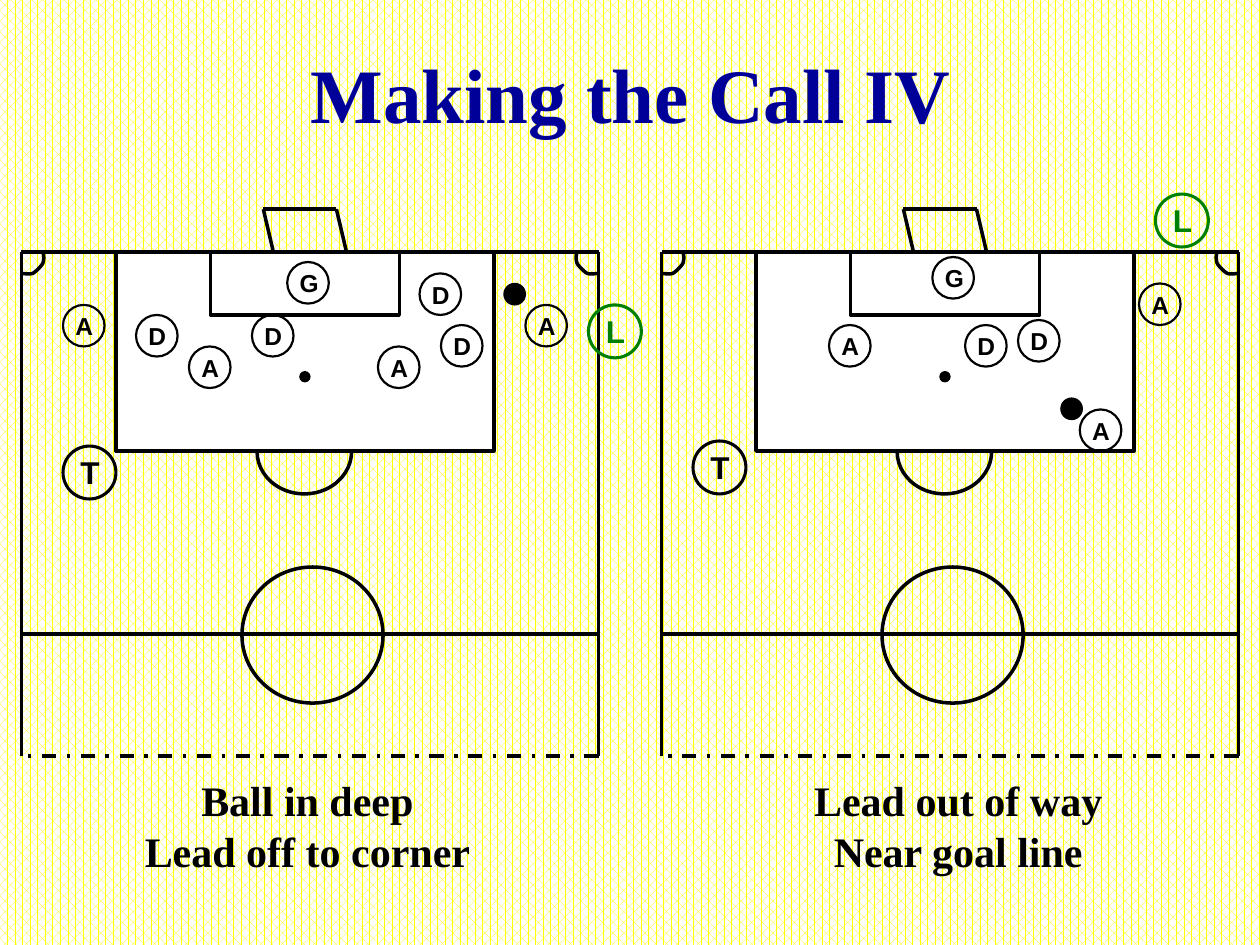
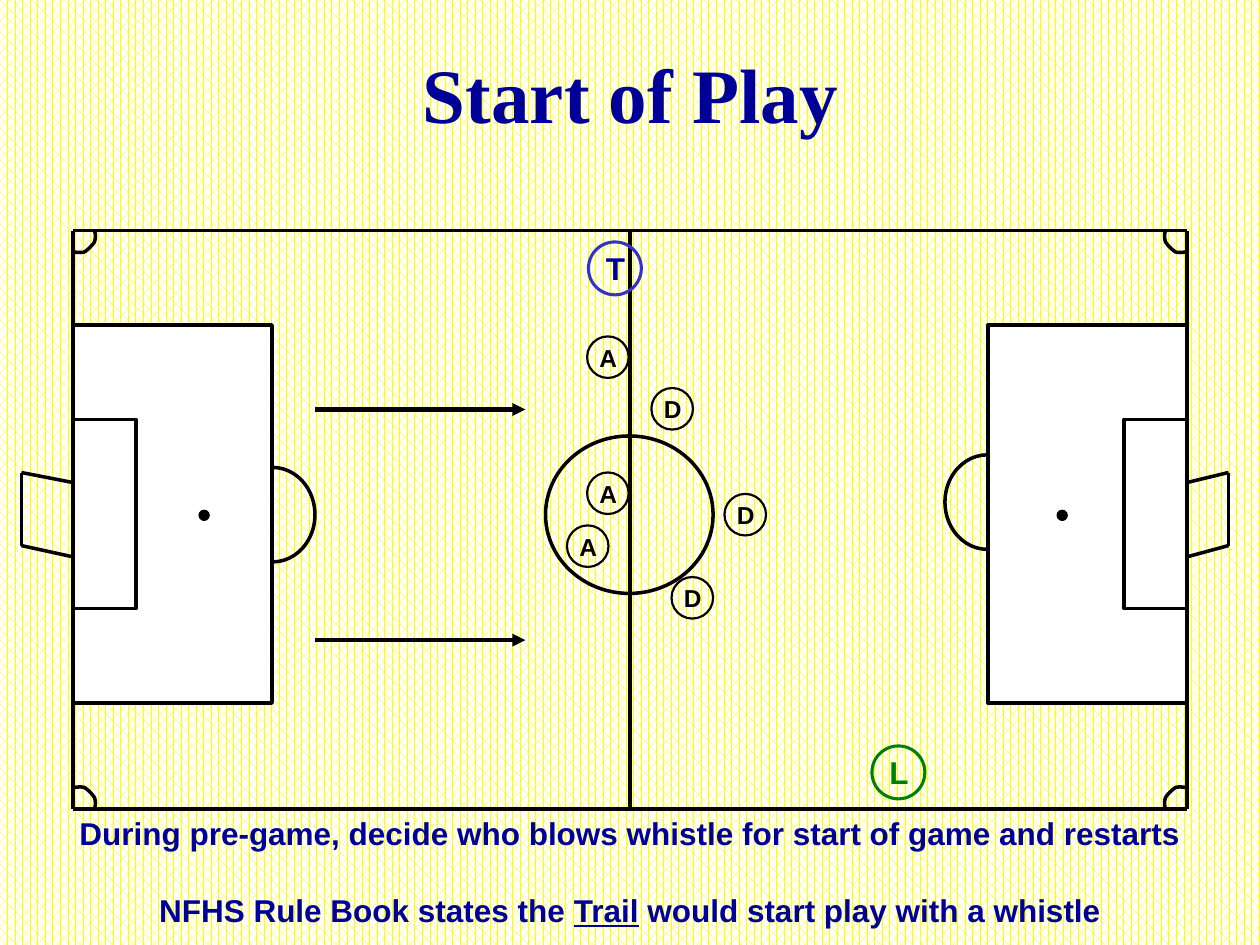
from dataclasses import dataclass
from typing import Any

from lxml import etree
from pptx import Presentation
from pptx.dml.color import RGBColor
from pptx.enum import dml, shapes as kinds, text as layout
from pptx.oxml.ns import qn
from pptx.util import Inches, Pt

# Shared colours and fonts
BLACK = RGBColor(0x00, 0x00, 0x00)
WHITE = RGBColor(0xFF, 0xFF, 0xFF)
YELLOW = RGBColor(0xFF, 0xFF, 0x00)
NAVY = RGBColor(0x00, 0x00, 0x99)
BLUE = RGBColor(0x33, 0x33, 0xCC)
GREEN = RGBColor(0x00, 0x80, 0x00)
SERIF = "Times New Roman"
SANS = "Arial"

OVAL = kinds.MSO_SHAPE.OVAL
RECTANGLE = kinds.MSO_SHAPE.RECTANGLE
SPOT_SIZE = 0.08
BALL_SIZE = 0.17

# Quarter arc at a top right corner, as offsets: a start and three Bezier pieces
CORNER_START = (-0.17, 0)
CORNER_CURVES = [
    [(-0.18, 0.03), (-0.18, 0.06), (-0.17, 0.09)],
    [(-0.16, 0.11), (-0.11, 0.16), (-0.09, 0.17)],
    [(-0.06, 0.18), (-0.02, 0.17), (0, 0.17)],
]


@dataclass(frozen=True)
class MarkerStyle:
    size: float
    line_width: float
    font_size: int
    label_shift: tuple[float, float]
    label_size: tuple[float, float]


PLAYER = MarkerStyle(0.33, 1.25, 14, (0, 0), (0.34, 0.33))
OFFICIAL = MarkerStyle(0.42, 1.75, 18, (0.04, 0.01), (0.35, 0.4))


@dataclass(frozen=True)
class Marker:
    letter: str
    left: float
    top: float
    style: MarkerStyle = PLAYER
    ring: RGBColor = BLACK
    ink: RGBColor = BLACK


@dataclass(frozen=True)
class HalfField:
    left: float
    ball: tuple[float, float]
    markers: list[Marker]
    caption: list[str]
    caption_left: float
    caption_width: float


@dataclass(frozen=True)
class FieldEnd:
    goal_line: float
    inward: int  # 1 when play lies to the right of the goal line, else -1
    goal_depth: float
    arc_top: float
    spot_distance: float


HALF_FIELDS = [
    HalfField(0.17, (4, 2.25), [
        Marker("T", 0.5, 3.54, OFFICIAL),
        Marker("L", 4.67, 2.42, OFFICIAL, GREEN, GREEN),
        Marker("A", 4.17, 2.42),
        Marker("G", 2.28, 2.08),
        Marker("D", 3.33, 2.17),
        Marker("D", 3.5, 2.58),
        Marker("A", 3, 2.75),
        Marker("D", 2, 2.5),
        Marker("A", 1.5, 2.75),
        Marker("D", 1.08, 2.5),
        Marker("A", 0.5, 2.42),
    ], ["Ball in deep", "Lead off to corner"], 1.05, 2.78),
    HalfField(5.25, (8.42, 3.16), [
        Marker("T", 5.5, 3.5, OFFICIAL),
        Marker("L", 9.17, 1.54, OFFICIAL, GREEN, GREEN),
        Marker("A", 9.04, 2.25),
        Marker("G", 7.4, 2.04),
        Marker("D", 8.08, 2.54),
        Marker("A", 8.57, 3.25),
        Marker("D", 7.66, 2.58),
        Marker("A", 6.58, 2.58),
    ], ["Lead out of way", "Near goal line"], 6.36, 2.49),
]

FIELD_ENDS = [
    FieldEnd(9.42, -1, 0.33, 3.61, 0.95),
    FieldEnd(0.58, 1, 0.41, 3.71, 1),
]

KICKOFF_MARKERS = [
    Marker("L", 6.92, 5.92, OFFICIAL, GREEN, GREEN),
    Marker("A", 4.66, 2.67),
    Marker("A", 4.66, 3.75),
    Marker("A", 4.5, 4.17),
    Marker("D", 5.33, 4.58),
    Marker("D", 5.75, 3.92),
    Marker("D", 5.17, 3.08),
    Marker("T", 4.67, 1.92, OFFICIAL, BLUE, NAVY),
]


# Drawing tools
def add_text(shapes: Any, paragraphs: list[str], left: float, top: float, width: float,
             height: float, *, size: int, font: str, color: RGBColor = BLACK,
             align: Any = layout.PP_ALIGN.CENTER, wrap: bool = False, grow: bool = True,
             top_margin: float = 0.05, gap: float = 0, underlined: str = "") -> None:
    box = shapes.add_textbox(Inches(left), Inches(top), Inches(width), Inches(height))
    frame = box.text_frame
    frame.word_wrap = wrap
    frame.auto_size = (layout.MSO_AUTO_SIZE.SHAPE_TO_FIT_TEXT if grow
                       else layout.MSO_AUTO_SIZE.NONE)
    frame.margin_top = Inches(top_margin)
    for index, content in enumerate(paragraphs):
        paragraph = frame.paragraphs[0] if index == 0 else frame.add_paragraph()
        paragraph.alignment = align
        if index and gap:
            paragraph.space_before = Pt(gap)
        pieces = content.partition(underlined) if underlined else (content,)
        for piece in filter(None, pieces):
            run = paragraph.add_run()
            run.text = piece
            run.font.size = Pt(size)
            run.font.name = font
            run.font.bold = True
            run.font.color.rgb = color
            if piece == underlined:
                run.font.underline = True


def style_outline(shape: Any, fill: RGBColor | None, color: RGBColor, width: float) -> None:
    shape.shadow.inherit = False
    if fill is None:
        shape.fill.background()
    else:
        shape.fill.solid()
        shape.fill.fore_color.rgb = fill
    shape.line.color.rgb = color
    shape.line.width = Pt(width)


def add_outline(shapes: Any, kind: Any, left: float, top: float, width: float, height: float,
                fill: RGBColor | None = None, color: RGBColor = BLACK,
                line_width: float = 2) -> None:
    shape = shapes.add_shape(kind, Inches(left), Inches(top), Inches(width), Inches(height))
    style_outline(shape, fill, color, line_width)


def add_dot(shapes: Any, left: float, top: float, size: float) -> None:
    add_outline(shapes, OVAL, left, top, size, size, BLACK, line_width=0.75)


def add_line(shapes: Any, x1: float, y1: float, x2: float, y2: float, width: float = 2,
             dashed: bool = False, arrow: bool = False) -> None:
    connector = shapes.add_connector(kinds.MSO_CONNECTOR.STRAIGHT, Inches(x1), Inches(y1),
                                     Inches(x2), Inches(y2))
    connector.line.color.rgb = BLACK
    connector.line.width = Pt(width)
    if dashed:
        connector.line.dash_style = dml.MSO_LINE.DASH_DOT
    properties = connector.element.spPr
    if arrow:
        etree.SubElement(properties.find(qn("a:ln")), qn("a:tailEnd"), type="triangle")
    etree.SubElement(properties, qn("a:effectLst"))


def add_path(shapes: Any, points: list[tuple[float, float]]) -> None:
    for start, end in zip(points, points[1:]):
        add_line(shapes, *start, *end)


def add_corner(shapes: Any, x: float, y: float, across: int, down: int) -> None:
    """Draw a corner arc; across and down are 1 or -1 and point into the field."""
    offsets = [CORNER_START]
    for first, second, end in CORNER_CURVES:
        start = offsets[-1]
        for step in range(1, 7):
            t = step / 6
            weights = ((1 - t) ** 3, 3 * t * (1 - t) ** 2, 3 * t * t * (1 - t), t ** 3)
            controls = (start, first, second, end)
            offsets.append(tuple(sum(w * point[axis] for w, point in zip(weights, controls))
                                 for axis in (0, 1)))
    points = [(Inches(x - across * dx), Inches(y + down * dy)) for dx, dy in offsets]
    builder = shapes.build_freeform(*points[0])
    builder.add_line_segments(points[1:], close=False)
    style_outline(builder.convert_to_shape(), None, BLACK, 2)


def add_marker(slide: Any, marker: Marker) -> None:
    shapes = slide.shapes.add_group_shape().shapes
    style = marker.style
    add_outline(shapes, OVAL, marker.left, marker.top, style.size, style.size,
                color=marker.ring, line_width=style.line_width)
    add_text(shapes, [marker.letter], marker.left + style.label_shift[0],
             marker.top + style.label_shift[1], *style.label_size, size=style.font_size,
             font=SANS, color=marker.ink, align=layout.PP_ALIGN.LEFT)


def add_slide(presentation: Any, title: str) -> Any:
    slide = presentation.slides.add_slide(presentation.slide_layouts[6])
    fill = slide.background.fill
    fill.patterned()
    fill.pattern = dml.MSO_PATTERN.PERCENT_60
    fill.fore_color.rgb = YELLOW
    fill.back_color.rgb = WHITE
    add_text(slide.shapes, [title], 2.1, 0.25, 5.81, 0.75, size=44, font=SERIF,
             color=NAVY, wrap=True, grow=False, top_margin=0.12)
    return slide


# Fields
def draw_half_field(slide: Any, field: HalfField) -> None:
    shapes = slide.shapes.add_group_shape().shapes
    left, right, top, bottom, halfway = field.left, field.left + 4.58, 2, 6, 5.03
    add_path(shapes, [(left, bottom), (left, top), (right, top), (right, bottom)])
    add_line(shapes, left, halfway, right, halfway)
    add_outline(shapes, OVAL, left + 1.75, 4.5, 1.12, 1.08)
    # Goal, arc, penalty area, goal area and spot
    add_path(shapes, [(left + 2, top), (left + 1.92, 1.66),
                      (left + 2.5, 1.66), (left + 2.58, top)])
    add_outline(shapes, OVAL, left + 1.87, 3.25, 0.75, 0.67)
    add_outline(shapes, RECTANGLE, left + 0.75, top, 3, 1.58, WHITE)
    add_outline(shapes, RECTANGLE, left + 1.5, top, 1.5, 0.5)
    add_dot(shapes, left + 2.21, 2.95, SPOT_SIZE)
    add_line(shapes, right, bottom, left, bottom, dashed=True)
    add_corner(shapes, left, top, 1, 1)
    add_corner(shapes, right, top, -1, 1)
    add_dot(slide.shapes, *field.ball, BALL_SIZE)
    for marker in field.markers:
        add_marker(slide, marker)
    add_text(slide.shapes, field.caption, field.caption_left, 6.1, field.caption_width, 0.9,
             size=24, font=SERIF)


def draw_field_end(shapes: Any, end: FieldEnd, top: float, bottom: float) -> None:
    def left_edge(distance: float, width: float) -> float:
        """Left of an item that starts at a distance from the goal line."""
        return end.goal_line + distance if end.inward > 0 else end.goal_line - distance - width

    goal_back = end.goal_line - end.inward * end.goal_depth
    add_line(shapes, end.goal_line, top, end.goal_line, bottom)
    add_outline(shapes, OVAL, left_edge(1.25, 0.67), end.arc_top, 0.67, 0.75)
    add_outline(shapes, RECTANGLE, left_edge(0, 1.58), 2.58, 1.58, 3, WHITE)
    add_outline(shapes, RECTANGLE, left_edge(0, 0.5), 3.33, 0.5, 1.5)
    add_path(shapes, [(end.goal_line, 3.83), (goal_back, 3.75),
                      (goal_back, 4.33), (end.goal_line, 4.42)])
    add_dot(shapes, left_edge(end.spot_distance, SPOT_SIZE), 4.05, SPOT_SIZE)
    add_corner(shapes, end.goal_line, top, end.inward, 1)
    add_corner(shapes, end.goal_line, bottom, end.inward, -1)


def draw_full_field(slide: Any) -> None:
    shapes = slide.shapes.add_group_shape().shapes
    left, right, top, bottom, middle = 0.58, 9.42, 1.83, 6.42, 5
    for y in (top, bottom):
        add_line(shapes, left, y, right, y)
    add_line(shapes, middle, top, middle, bottom)
    add_outline(shapes, OVAL, 4.33, 3.46, 1.33, 1.25)
    for end in FIELD_ENDS:
        draw_field_end(shapes, end, top, bottom)


def main() -> None:
    presentation = Presentation()
    presentation.slide_width = Inches(10)
    presentation.slide_height = Inches(7.5)

    # Two half fields side by side
    slide = add_slide(presentation, "Making the Call IV")
    for field in HALF_FIELDS:
        draw_half_field(slide, field)

    # Full field at kickoff
    slide = add_slide(presentation, "Start of Play")
    draw_full_field(slide)
    for y in (3.25, 5.08):
        add_line(slide.shapes, 2.5, y, 4.17, y, width=2.5, arrow=True)
    for marker in KICKOFF_MARKERS:
        add_marker(slide, marker)
    add_text(slide.shapes, [
        "During pre-game, decide who blows whistle for start of game and restarts",
        "NFHS Rule Book states the Trail would start play with a whistle",
    ], 0.53, 6.41, 8.94, 1, size=18, font=SANS, color=NAVY, gap=22.5, underlined="Trail")

    presentation.save("out.pptx")


if __name__ == "__main__":
    main()
